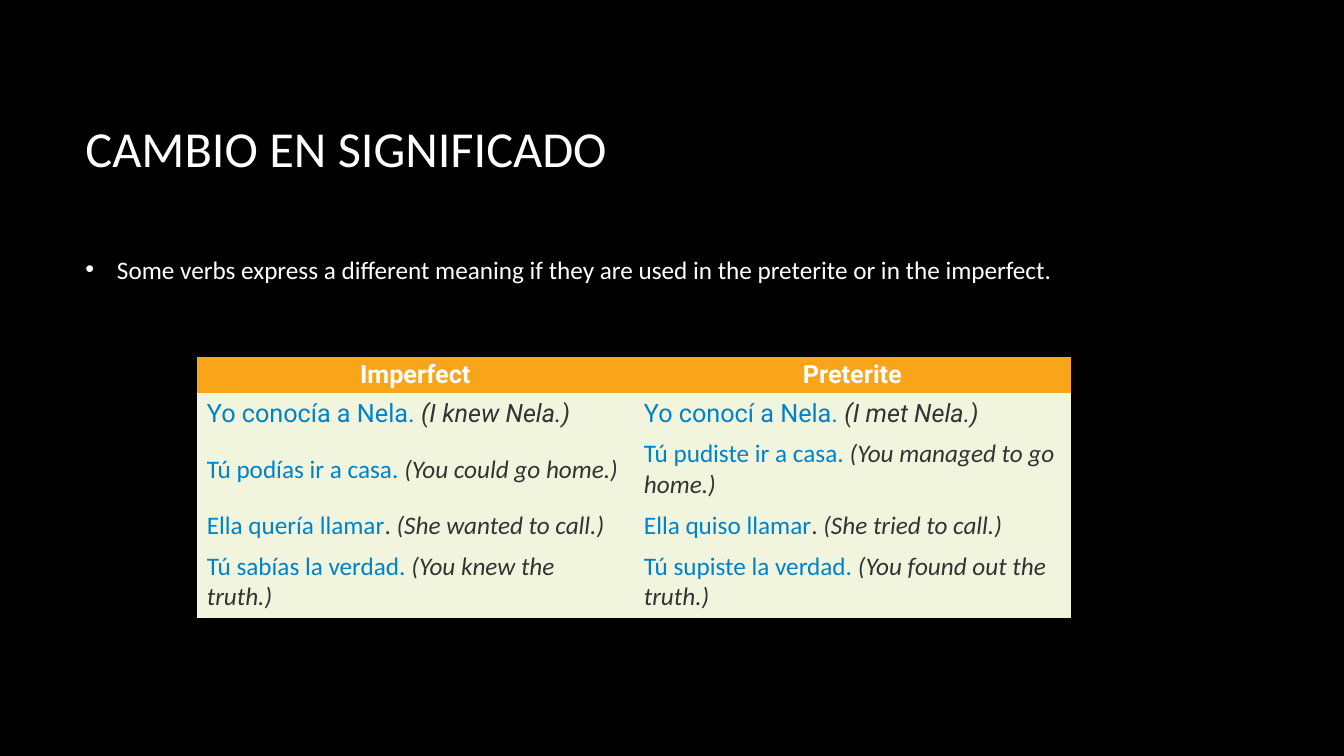
from lxml.etree import SubElement
from pptx import Presentation
from pptx.dml.color import RGBColor
from pptx.enum.text import MSO_ANCHOR, PP_ALIGN
from pptx.oxml.ns import qn
from pptx.util import Pt

WHITE, BLACK = "FFFFFF", "000000"
ORANGE, CREAM = "F9A51A", "F1F5DD"
BLUE, GRAY = "0082C9", "333333"

HEADS = ["Imperfect", "Preterite"]
# Each cell: Spanish verb phrase, its full stop, English meaning
VERBS = [
    [("Yo conocía a Nela", "(I knew Nela.)"),
     ("Yo conocí a Nela", "(I met Nela.)")],
    [("Tú podías ir a casa", "(You could go home.)"),
     ("Tú pudiste ir a casa", "(You managed to go home.)")],
    [("Ella quería llamar", "(She wanted to call.)"),
     ("Ella quiso llamar", "(She tried to call.)")],
    [("Tú sabías la verdad", "(You knew the truth.)"),
     ("Tú supiste la verdad", "(You found out the truth.)")],
]
HEIGHTS = [25.7, 28.3, 51.1, 29.2, 51.1]
ROBOTO_ROW, GRAY_DOT_ROW = 0, 2


def color(code):
    return RGBColor.from_string(code)


def write(par, text, size=18, font="Calibri", ink=WHITE, bold=False, slant=False):
    run = par.add_run()
    run.text = text
    run.font.size = Pt(size)
    run.font.name = font
    run.font.color.rgb = color(ink)
    run.font.bold = bold
    run.font.italic = slant


class Deck:
    def __init__(self):
        self.show = Presentation()
        self.show.slide_width, self.show.slide_height = Pt(960), Pt(540)
        self.slide = self.show.slides.add_slide(self.show.slide_layouts[6])
        fill = self.slide.background.fill
        fill.solid()
        fill.fore_color.rgb = color(BLACK)

    def text(self, left, top, width, height, words, bullet=False, **style):
        box = self.slide.shapes.add_textbox(Pt(left), Pt(top), Pt(width), Pt(height))
        frame = box.text_frame
        frame.word_wrap = True
        frame.vertical_anchor = MSO_ANCHOR.MIDDLE
        par = frame.paragraphs[0]
        if bullet:
            par.space_after = Pt(10)
            props = par._p.get_or_add_pPr()
            props.set("marL", str(Pt(22.5)))
            props.set("indent", str(-Pt(22.5)))
            SubElement(props, qn("a:buFont"), typeface="Arial")
            SubElement(props, qn("a:buChar"), char="•")
        write(par, words, **style)

    def table(self, left, top, width, heights, count):
        frame = self.slide.shapes.add_table(
            len(heights), count, Pt(left), Pt(top), Pt(width), Pt(sum(heights)))
        grid = frame.table
        grid.first_row = grid.horz_banding = False
        for row, height in zip(grid.rows, heights):
            row.height = Pt(height)
        return grid

    def cell(self, cell, back, inset=None):
        """Paint a borderless cell and return its paragraph."""
        props = cell._tc.get_or_add_tcPr()
        for side in ("lnL", "lnR", "lnT", "lnB"):
            SubElement(SubElement(props, qn("a:" + side), w="0"), qn("a:noFill"))
        cell.fill.solid()
        cell.fill.fore_color.rgb = color(back)
        cell.vertical_anchor = MSO_ANCHOR.MIDDLE
        if inset:
            cell.margin_left = cell.margin_right = Pt(inset[0])
            cell.margin_top = cell.margin_bottom = Pt(inset[1])
        return cell.text_frame.paragraphs[0]


def main():
    deck = Deck()
    deck.text(54, 48, 798, 114.5, "CAMBIO EN SIGNIFICADO", size=36)
    deck.text(54, 168.5, 798, 47.5,
              "Some verbs express a different meaning if they are used "
              "in the preterite or in the imperfect.", bullet=True)

    grid = deck.table(140.6, 255, 624.4, HEIGHTS, len(HEADS))
    for col, head in enumerate(HEADS):
        par = deck.cell(grid.cell(0, col), ORANGE, inset=(5, 2.2))
        par.alignment = PP_ALIGN.CENTER
        write(par, head, font="Roboto", bold=True)
    for row, pair in enumerate(VERBS):
        font = "Roboto" if row == ROBOTO_ROW else "Calibri"
        dot = GRAY if row == GRAY_DOT_ROW else BLUE
        for col, (verb, sense) in enumerate(pair):
            par = deck.cell(grid.cell(row + 1, col), CREAM)
            write(par, verb, font=font, ink=BLUE)
            write(par, ". ", font=font, ink=dot)
            write(par, sense, font=font, ink=GRAY, slant=True)

    deck.show.save("out.pptx")


if __name__ == "__main__":
    main()
